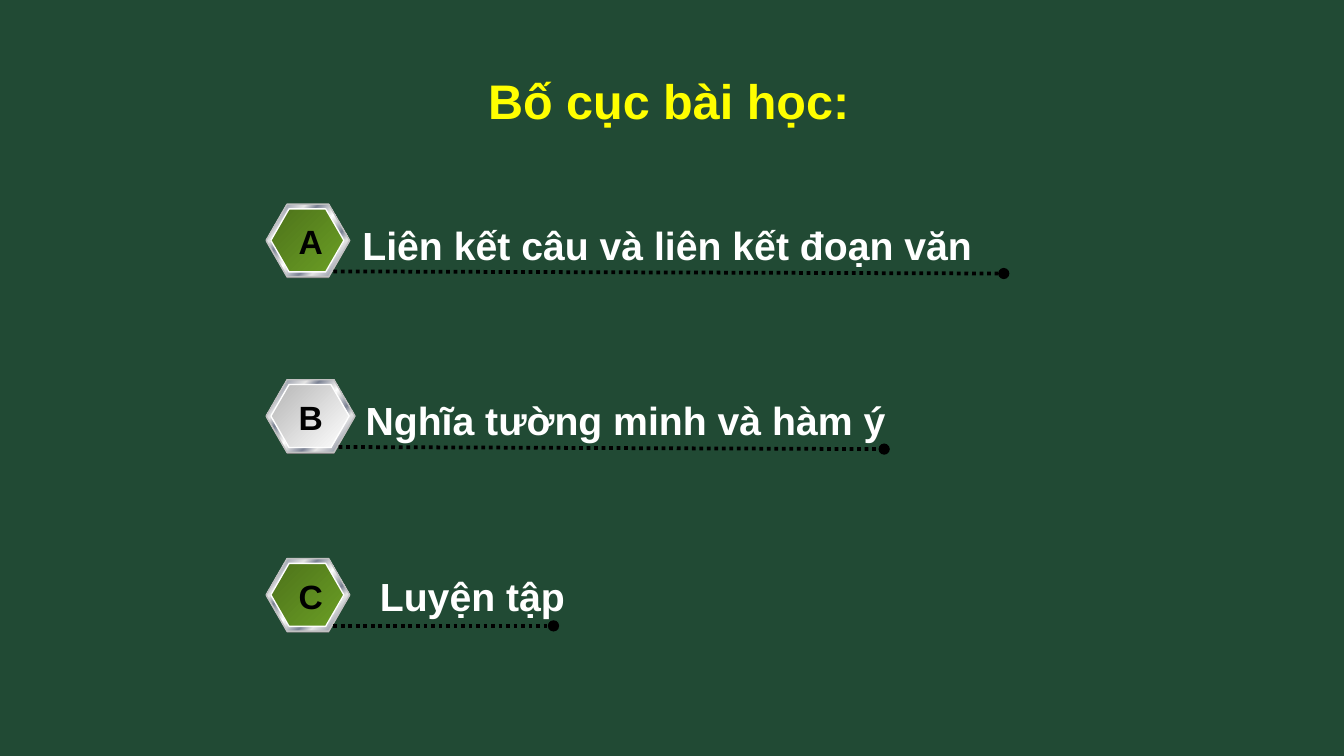
from dataclasses import dataclass

from lxml import etree
from pptx import Presentation
from pptx import util as u
from pptx.dml.color import RGBColor
from pptx.enum import dml, shapes, text
from pptx.oxml.ns import qn

LEFT = 5.03
HIGH = 1.37
STEEL = [(0, "E6E6E6"), (7, "7D8496"), (26, "E6E6E6"), (34, "7D8496"),
         (46, "E6E6E6"), (50, "FFFFFF"), (54, "E6E6E6"), (66, "7D8496"),
         (74, "E6E6E6"), (93, "7D8496"), (100, "E6E6E6")]
GREEN = [(0, "4D721A"), (100, "6B9F25")]
SILVER = [(0, "B6B6B6"), (100, "FFFFFF")]


@dataclass
class Box:
    left: float
    top: float
    width: float
    height: float

    def size(self) -> list:
        return [u.Cm(n) for n in (self.left, self.top, self.width, self.height)]


@dataclass
class Part:
    mark: str
    label: str
    top: float
    width: float
    core: list
    end: float
    drop: float
    box: Box
    align: text.PP_ALIGN = text.PP_ALIGN.LEFT
    space: float = 1
    after: float = 0


def tint(code: str) -> RGBColor:
    return RGBColor.from_string(code)


def blend(shape, stops: list) -> None:
    shape.fill.gradient()
    shape.fill.gradient_angle = 315
    ramp = shape._element.spPr.find(qn("a:gradFill")).find(qn("a:gsLst"))
    for stop in list(ramp):
        ramp.remove(stop)
    for place, code in stops:
        stop = etree.SubElement(ramp, qn("a:gs"), pos=str(place * 1000))
        etree.SubElement(stop, qn("a:srgbClr"), val=code)


def add_hex(group, box: Box, fill, line: str = ""):
    shape = group.add_shape(shapes.MSO_SHAPE.HEXAGON, *box.size())
    shape.shadow.inherit = False
    shape.adjustments[0] = 0.289
    shape.adjustments[1] = 1.155
    if isinstance(fill, str):
        shape.fill.solid()
        shape.fill.fore_color.rgb = tint(fill)
    else:
        blend(shape, fill)
    if line:
        shape.line.color.rgb = tint(line)
        shape.line.width = u.Pt(0.75)
    else:
        shape.line.fill.background()


def add_rule(group, start: float, end: float, top: float, drop: float) -> None:
    rule = group.add_connector(shapes.MSO_CONNECTOR.STRAIGHT, u.Cm(start),
                               u.Cm(top), u.Cm(end), u.Cm(top + drop))
    rule.line.color.rgb = tint("000000")
    rule.line.width = u.Pt(2)
    rule.line.dash_style = dml.MSO_LINE.ROUND_DOT
    etree.SubElement(rule.line._get_or_add_ln(), qn("a:tailEnd"), type="oval")
    etree.SubElement(rule._element.spPr, qn("a:effectLst"))


def add_text(group, box: Box, words: str, size: float, code: str,
             align=text.PP_ALIGN.CENTER, space: float = 1, after: float = 0):
    frame = group.add_textbox(*box.size()).text_frame
    frame.text = words
    frame.word_wrap = False
    frame.auto_size = text.MSO_AUTO_SIZE.SHAPE_TO_FIT_TEXT
    line = frame.paragraphs[0]
    line.alignment = align
    line.line_spacing = space
    line.space_after = u.Pt(after)
    font = line.runs[0].font
    font.name = "Arial"
    font.size = u.Pt(size)
    font.bold = True
    font.color.rgb = tint(code)
    return frame


def trim(frame) -> None:
    frame.margin_left = frame.margin_right = u.Cm(0.18)
    frame.margin_top = frame.margin_bottom = u.Cm(0.1)


def add_part(slide, part: Part) -> None:
    group = slide.shapes.add_group_shape().shapes
    top, width = part.top, part.width
    add_hex(group, Box(LEFT, top + 0.03, width, HIGH), "808080")
    add_hex(group, Box(LEFT, top, width, HIGH), STEEL, "C0C0C0")
    add_hex(group, Box(LEFT + 0.09, top + 0.09, width - 0.2, 1.19),
            part.core, "FFFFFF")
    add_rule(group, LEFT + width - 0.31, part.end, top + 1.27, part.drop)
    frame = add_text(group, part.box, part.label, 21, "FFFFFF",
                     part.align, part.space, part.after)
    if part.after:
        trim(frame)
    add_text(group, Box(5.39, top + 0.2, 0.97, 1.02), part.mark, 18, "000000")


PARTS = [
    Part("A", "Liên kết câu và liên kết đoạn văn", 3.86, 1.58, GREEN,
         18.97, 0.04, Box(6.6, 4.06, 12.17, 1.14)),
    Part("B", "Nghĩa tường minh và hàm ý", 7.18, 1.68, SILVER,
         16.71, 0.04, Box(6.73, 7.26, 10.31, 1.22),
         text.PP_ALIGN.JUSTIFY, 1.15, 7.5),
    Part("C", "Luyện tập", 10.56, 1.58, GREEN,
         10.46, 0, Box(6.93, 10.69, 4.04, 1.14)),
]


def main() -> None:
    deck = Presentation()
    deck.slide_width, deck.slide_height = u.Cm(25.4), u.Cm(14.29)
    slide = deck.slides.add_slide(deck.slide_layouts[6])
    back = slide.background.fill
    back.solid()
    back.fore_color.rgb = tint("214A34")
    for part in PARTS:
        add_part(slide, part)
    title = add_text(slide.shapes, Box(1.7, 0.58, 21.89, 2.77),
                     "Bố cục bài học:", 26, "FFFF00", space=0.9)
    title.word_wrap = True
    title.auto_size = text.MSO_AUTO_SIZE.NONE
    title.vertical_anchor = text.MSO_ANCHOR.MIDDLE
    trim(title)
    deck.save("out.pptx")


if __name__ == "__main__":
    main()
